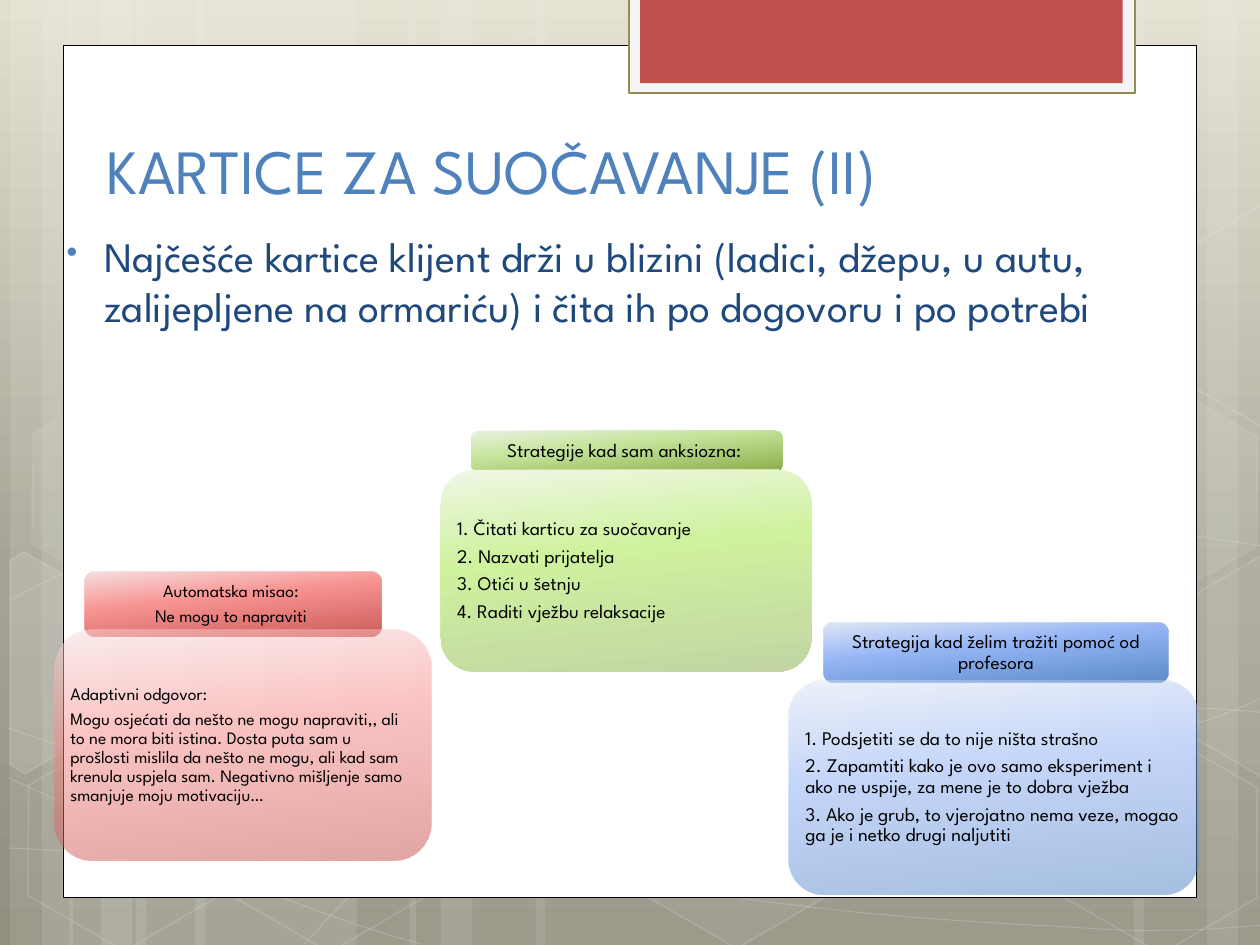
from pptx import Presentation
from pptx.dml.color import RGBColor
from pptx.enum.shapes import MSO_SHAPE as Preset
from pptx.enum.text import MSO_ANCHOR as Anchor, PP_ALIGN as Align
from pptx.oxml.ns import qn
from pptx.util import Cm, Pt
from lxml.etree import SubElement

FONT = "League Spartan"
WHITE, BLACK = RGBColor(0xFF, 0xFF, 0xFF), RGBColor(0, 0, 0)
BLUE, NAVY = RGBColor(0x4F, 0x81, 0xBD), RGBColor(0x1F, 0x49, 0x7D)
RED, PALE = RGBColor(0xC0, 0x50, 0x4D), RGBColor(0xF5, 0xF5, 0xF5)
OLIVE = RGBColor(0x94, 0x8A, 0x54)

# Places and sizes below are in inches.
TITLE = "KARTICE ZA SUOČAVANJE (II)"
BODY = ("Najčešće kartice klijent drži u blizini (ladici, džepu, u autu, "
        "zalijepljene na ormariću) i čita ih po dogovoru i po potrebi")

# Gradient stops: position, colour
BACKDROP = [(0, "E2DFCF"), (62, "A5A293"), (100, "928F80")]
ROSE = [(0, "F7DDDD"), (40, "F88B89"), (100, "C64B47")]
GREEN = [(0, "EAF1DF"), (40, "C5E49A"), (100, "8EAE4C")]
LIGHT_GREEN = [(0, "F0F7E6"), (40, "CFF29E"), (100, "C2D5A3")]
SKY = [(0, "DDE5F6"), (40, "8CAFF5"), (100, "4A80C3")]

# Cards: box, gradient, opacity, text size, inset, alignment, paragraphs
CARDS = [
    ((0.67, 4.54, 2.36, 0.51), ROSE, 90, 10, 0.04, Align.CENTER,
     ["Automatska misao: ", "Ne mogu to napraviti "]),
    ((0.43, 5, 2.99, 1.83), ROSE, 50, 10, 0.04, Align.LEFT,
     ["Adaptivni odgovor:",
      "Mogu osjećati da nešto ne mogu napraviti,, ali to ne mora biti istina. "
      "Dosta puta sam u prošlosti mislila da nešto ne mogu, ali kad sam krenula "
      "uspjela sam. Negativno mišljenje samo smanjuje moju motivaciju…"]),
    ((3.74, 3.42, 2.47, 0.32), GREEN, 100, 11, 0.05, Align.CENTER,
     ["Strategije kad sam anksiozna: "]),
    ((3.5, 3.73, 2.94, 1.6), LIGHT_GREEN, 100, 11, 0.05, Align.LEFT,
     ["1. Čitati karticu za suočavanje", "2. Nazvati prijatelja",
      "3. Otići u šetnju", "4. Raditi vježbu relaksacije"]),
    ((6.54, 4.94, 2.73, 0.48), SKY, 90, 11, 0.05, Align.CENTER,
     ["Strategija kad želim tražiti pomoć od profesora"]),
    ((6.26, 5.4, 3.25, 1.7), SKY, 50, 11, 0.05, Align.LEFT,
     ["1. Podsjetiti se da to nije ništa strašno",
      "2. Zapamtiti kako je ovo samo eksperiment i ako ne uspije, za mene je to dobra vježba",
      "3. Ako je grub, to vjerojatno nema veze, mogao ga je i netko drugi naljutiti"]),
]

# Full-height stripes: left, width
STRIPES = [(1.08, 1.75), (0.08, 0.5), (0.33, 0.83), (1.55, 1.75), (0.55, 0.5), (0.8, 0.83),
           (7.33, 1.75), (9.58, 0.5), (9, 0.83), (4.25, 3.08), (3.25, 0.5), (3.5, 0.83)]

# Bezier chains: start, then two controls and an end for each piece
CURVES = [
    [(0.07, 6.73), (0.61, 6.76), (1.15, 6.79), (1.9, 6.78), (2.65, 6.77), (3.58, 6.75),
     (4.58, 6.65), (5.58, 6.55), (7, 6.36), (7.92, 6.17), (8.83, 5.98), (9.77, 5.68),
     (10.07, 5.51)],
    [(0.07, 4.77), (0.36, 4.61), (0.65, 4.46), (1.21, 4.31), (1.78, 4.16), (2.59, 3.94),
     (3.47, 3.87), (4.36, 3.8), (5.44, 3.79), (6.54, 3.87), (7.64, 3.95), (9.47, 4.26),
     (10.07, 4.34)],
    [(0.06, 6.17), (1.27, 6.72), (2.47, 7.27), (3.34, 7.49)],
    [(0.07, 5.78), (0.38, 5.89), (0.7, 6), (1.28, 6.16), (1.86, 6.31), (2.73, 6.56),
     (3.57, 6.73), (4.4, 6.9), (5.45, 7.08), (6.28, 7.18), (7.11, 7.29), (8, 7.33),
     (8.53, 7.36), (9.05, 7.4), (9.19, 7.38), (9.45, 7.38), (9.71, 7.37), (9.89, 7.35),
     (10.07, 7.34)],
    [(2.42, 7.49), (2.6, 7.29), (2.78, 7.09), (3.02, 6.91), (3.26, 6.73), (3.6, 6.53),
     (3.88, 6.39), (4.16, 6.25), (4.33, 6.19), (4.7, 6.09), (5.06, 5.99), (5.73, 5.85),
     (6.08, 5.78), (6.44, 5.71), (6.49, 5.71), (6.8, 5.69), (7.11, 5.66), (7.6, 5.63),
     (7.94, 5.62), (8.29, 5.61), (8.86, 5.62), (8.86, 5.62), (9.08, 5.62), (9.31, 5.62),
     (9.53, 5.62), (9.71, 5.63), (9.88, 5.64), (9.97, 5.65), (10.06, 5.66), (10.03, 5.65),
     (10.06, 5.66)],
]

# Hexagons: left, top, fill opacity, line opacity
HEXAGONS = [(3.34, 0.36, 4, 8), (4.97, 5.89, 6, 12), (0.11, 5.91, 0, 12), (0.14, 3.12, 7, 8),
            (1.74, 5.92, 0, 12), (7.53, 4.53, 10, 12), (8.34, 5.93, 0, 12), (8.34, 3.14, 7, 8)]

# Hexagons cut by the page edge: fill opacity, corners
CUT_HEXAGONS = [
    (10, [(0.08, 4.45), (0.19, 4.38), (0.96, 4.82), (0.95, 5.7), (0.2, 6.14), (0.08, 6.07)]),
    (4, [(9.26, 4.85), (10.01, 4.41), (10.09, 4.46), (10.09, 6.13), (10.02, 6.17), (9.26, 5.73)]),
    (0, [(9.26, 2.07), (10.01, 1.63), (10.1, 1.68), (10.09, 3.35), (10.02, 3.39), (9.26, 2.95)]),
]


def lengths(inches):
    return [Cm(2.54 * value) for value in inches]


def fade(color, opacity):
    if opacity < 100:
        SubElement(color, qn("a:alpha"), val=str(opacity * 1000))


def paint(shape, fill=None, line=None, width=1, fill_opacity=100, line_opacity=100):
    shape.shadow.inherit = False
    solid = qn("a:solidFill")
    for style, color, opacity, steps in (
            (shape.fill, fill, fill_opacity, solid),
            (shape.line.fill, line, line_opacity, qn("a:ln") + "/" + solid)):
        if color is None or not opacity:
            style.background()
            continue
        style.solid()
        style.fore_color.rgb = color
        fade(shape.element.spPr.find(steps)[0], opacity)
    if line is not None:
        shape.line.width = Pt(width)


def shade(fill, element, stops, angle, opacity=100):
    """Give a fill a linear gradient, its angle measured clockwise."""
    fill.gradient()
    fill.gradient_angle = 360 - angle
    stop_list = next(element.iter(qn("a:gsLst")))
    for old in list(stop_list):
        stop_list.remove(old)
    for position, color in stops:
        stop = SubElement(stop_list, qn("a:gs"), pos=str(position * 1000))
        fade(SubElement(stop, qn("a:srgbClr"), val=color), opacity)


def add_preset(page, preset, box, **look):
    shape = page.shapes.add_shape(preset, *lengths(box))
    paint(shape, **look)
    return shape


def add_outline(page, points, close, **look):
    start, *rest = [lengths(point) for point in points]
    builder = page.shapes.build_freeform(*start)
    builder.add_line_segments(rest, close=close)
    shape = builder.convert_to_shape()
    paint(shape, **look)
    return shape


def bend(shape):
    """Turn each three straight segments into one cubic Bezier piece."""
    outline = next(shape.element.iter(qn("a:moveTo"))).getparent()
    segments = outline.findall(qn("a:lnTo"))
    for first in range(0, len(segments), 3):
        piece = SubElement(outline, qn("a:cubicBezTo"))
        for segment in segments[first:first + 3]:
            piece.append(segment[0])
            outline.remove(segment)


def write(frame, texts, size, color, align=Align.LEFT):
    frame.word_wrap = True
    frame.text = "\n".join(texts)
    for para in frame.paragraphs:
        para.alignment = align
        for span in para.runs:
            span.font.name, span.font.size = FONT, Pt(size)
            span.font.color.rgb = color


def add_backdrop(page):
    shade(page.background.fill, page.element, BACKDROP, 90)
    for left, width in STRIPES:
        add_preset(page, Preset.RECTANGLE, (left, 0, width, 7.5), fill=WHITE, fill_opacity=10)
    for chain in CURVES:
        bend(add_outline(page, chain, False, line=WHITE, width=0.5, line_opacity=20))
    for left, top, inside, edge in HEXAGONS:
        hexagon = add_preset(page, Preset.HEXAGON, (left, top, 1.75, 1.52), fill=WHITE,
                             line=WHITE, fill_opacity=inside, line_opacity=edge)
        hexagon.adjustments[0] = 0.285
        hexagon.rotation = 30
    for inside, corners in CUT_HEXAGONS:
        add_outline(page, corners, True, fill=WHITE, line=WHITE, fill_opacity=inside, line_opacity=12)
    add_preset(page, Preset.RECTANGLE, (0.5, 0.36, 9, 6.76), fill=WHITE, line=BLACK, width=0.5)
    add_preset(page, Preset.RECTANGLE, (4.99, -0.02, 4.02, 0.76), fill=PALE, line=OLIVE, width=1.25)
    add_preset(page, Preset.RECTANGLE, (5.08, -0.02, 3.83, 0.68), fill=RED)


def add_headings(page):
    title = page.shapes.add_textbox(*lengths((0.75, 0.44, 7.68, 1.25))).text_frame
    write(title, [TITLE], 36, BLUE)
    title.vertical_anchor = Anchor.BOTTOM
    body = page.shapes.add_textbox(*lengths((0.35, 1.78, 8.98, 3.84))).text_frame
    write(body, [BODY], 24, NAVY)
    body.paragraphs[0].space_before = Pt(4.8)
    settings = body.paragraphs[0]._p.get_or_add_pPr()
    for name, length in zip(("marL", "indent"), lengths((0.38, -0.3))):
        settings.set(name, str(length))
    SubElement(SubElement(settings, qn("a:buClr")), qn("a:srgbClr"), val=str(BLUE))
    SubElement(settings, qn("a:buSzPct"), val="76000")
    SubElement(settings, qn("a:buChar"), char="•")


def add_card(page, box, stops, opacity, size, inset, align, texts):
    card = add_preset(page, Preset.ROUNDED_RECTANGLE, box)
    shade(card.fill, card.element, stops, 84, opacity)
    frame = card.text_frame
    write(frame, texts, size, BLACK, align)
    frame.vertical_anchor = Anchor.MIDDLE
    for side in ("left", "top", "right", "bottom"):
        setattr(frame, f"margin_{side}", Cm(2.54 * inset))
    for para in frame.paragraphs:
        para.line_spacing, para.space_after = 0.9, Pt(0.35 * size)


deck = Presentation()
deck.slide_width, deck.slide_height = lengths((10, 7.5))
slide = deck.slides.add_slide(deck.slide_layouts[6])
add_backdrop(slide)
add_headings(slide)
for card_content in CARDS:
    add_card(slide, *card_content)
deck.save("out.pptx")
